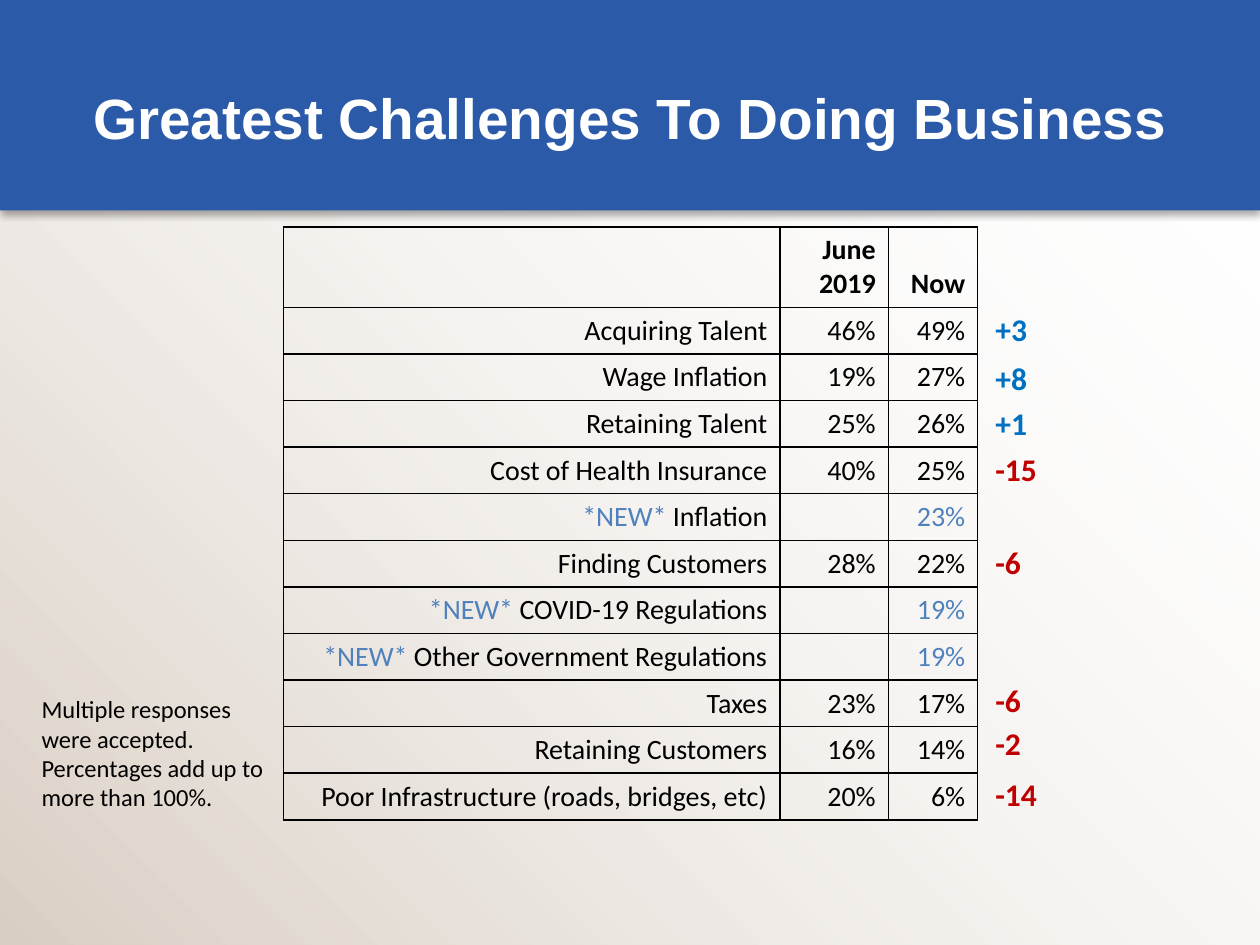
from lxml import etree
from pptx import Presentation
from pptx import util as u
from pptx.dml.color import RGBColor
from pptx.enum import shapes, text
from pptx.oxml import parse_xml
from pptx.oxml.ns import nsdecls, qn

WHITE = RGBColor(0xFF, 0xFF, 0xFF)
BLACK = RGBColor(0, 0, 0)
SAND = RGBColor(0xDA, 0xCF, 0xC4)
NAVY = RGBColor(0x2B, 0x5A, 0xA9)
SKY = RGBColor(0x4F, 0x81, 0xBD)
BLUE = RGBColor(0x00, 0x70, 0xC0)
RED = RGBColor(0xC0, 0x00, 0x00)

NEW = "*NEW* "
ROWS = [
    ("", "June 2019", "Now"),
    ("Acquiring Talent", "46%", "49%"),
    ("Wage Inflation", "19%", "27%"),
    ("Retaining Talent", "25%", "26%"),
    ("Cost of Health Insurance", "40%", "25%"),
    (NEW + "Inflation", "", "23%"),
    ("Finding Customers", "28%", "22%"),
    (NEW + "COVID-19 Regulations", "", "19%"),
    (NEW + "Other Government Regulations", "", "19%"),
    ("Taxes", "23%", "17%"),
    ("Retaining Customers", "16%", "14%"),
    ("Poor Infrastructure (roads, bridges, etc)", "20%", "6%"),
]
GAPS = [("+3", 2.41), ("+8", 2.8), ("+1", 3.16), ("-15", 3.52),
        ("-6", 4.26), ("-6", 5.36), ("-2", 5.7), ("-14", 6.1)]


class Page:
    font = "Calibri"
    size = 16

    def __init__(self, deck):
        self.slide = deck.slides.add_slide(deck.slide_layouts[6])

    def style(self, para, size, color, bold=False, font=None, align=None):
        para.alignment = align
        face = para.font
        face.name = font or self.font
        face.size = u.Pt(size)
        face.bold = bold
        face.color.rgb = color

    def block(self, *box):
        shape = self.slide.shapes.add_shape(
            shapes.MSO_SHAPE.RECTANGLE, *map(u.Inches, box))
        shape.shadow.inherit = False
        shape.line.fill.background()
        return shape

    def fade(self, *box):
        shape = self.block(*box)
        shape.fill.gradient()
        shape.fill.gradient_angle = 45
        for stop, color in zip(shape.fill.gradient_stops, (SAND, WHITE)):
            stop.color.rgb = color
        last = list(shape._element.spPr.iter(qn("a:srgbClr")))[-1]
        etree.SubElement(last, qn("a:alpha")).set("val", "0")

    def band(self, *box):
        shape = self.block(*box)
        shape.fill.solid()
        shape.fill.fore_color.rgb = NAVY
        shape._element.spPr.find(qn("a:effectLst")).append(parse_xml(
            f'<a:outerShdw {nsdecls("a")} blurRad="{u.Pt(4)}" dist="{u.Pt(2.2)}" '
            'dir="5400000" rotWithShape="0"><a:srgbClr val="000000">'
            '<a:alpha val="32000"/></a:srgbClr></a:outerShdw>'))

    def label(self, words, box, size, color, middle=False, **style):
        frame = self.slide.shapes.add_textbox(*map(u.Inches, box)).text_frame
        frame.word_wrap = True
        frame.margin_left = frame.margin_right = u.Inches(0.05)
        if middle:
            frame.vertical_anchor = text.MSO_ANCHOR.MIDDLE
        para = frame.paragraphs[0]
        para.text = words
        self.style(para, size, color, **style)

    def edge(self, cell):
        props = cell._tc.get_or_add_tcPr()
        for side in "LRTB":
            props.append(parse_xml(
                f'<a:ln{side} {nsdecls("a")} w="{u.Pt(1)}"><a:solidFill>'
                f'<a:srgbClr val="{BLACK}"/></a:solidFill></a:ln{side}>'))
        cell.fill.background()

    def cell(self, cell, words, color, head):
        self.edge(cell)
        cell.vertical_anchor = (
            text.MSO_ANCHOR.BOTTOM if head else text.MSO_ANCHOR.MIDDLE)
        para = cell.text_frame.paragraphs[0]
        self.style(para, self.size, color, head, align=text.PP_ALIGN.RIGHT)
        if not words:
            para._p.get_or_add_endParaRPr().set("sz", str(self.size * 100))
        elif words.startswith(NEW):
            mark = para.add_run()
            mark.text = NEW
            mark.font.color.rgb = SKY
            para.add_run().text = words[len(NEW):]
        else:
            para.add_run().text = words

    def table(self, rows, left, top, wide, first, high):
        tall = [first] + [high] * (len(rows) - 1)
        grid = self.slide.shapes.add_table(
            len(rows), len(wide),
            *map(u.Inches, (left, top, sum(wide), sum(tall)))).table
        grid.first_row = grid.horz_banding = False
        for col, width in zip(grid.columns, wide):
            col.width = u.Inches(width)
        for r, (line, height) in enumerate(zip(rows, tall)):
            grid.rows[r].height = u.Inches(height)
            fresh = line[0].startswith(NEW)
            for c, words in enumerate(line):
                color = SKY if fresh and c else BLACK
                self.cell(grid.cell(r, c), words, color, r == 0)


def main():
    deck = Presentation()
    deck.slide_width, deck.slide_height = u.Inches(10), u.Inches(7.5)
    page = Page(deck)
    page.fade(0, 0, 10, 7.5)
    page.band(0, 0, 10, 1.67)
    page.label("Greatest Challenges To Doing Business", (0.5, 0.3, 9, 1.25),
               32.4, WHITE, middle=True, bold=True, font="Arial",
               align=text.PP_ALIGN.CENTER)
    page.table(ROWS, 2.25, 1.8, (3.94, 0.86, 0.71), 0.64, 0.37)
    page.label("Multiple responses were accepted. "
               "Percentages add up to more than 100%.",
               (0.28, 5.46, 1.96, 1.04), 14, BLACK)
    for words, top in GAPS:
        color = BLUE if words.startswith("+") else RED
        page.label(words, (7.85, top, 0.5, 0.4), 18, color, bold=True)
    deck.save("out.pptx")


if __name__ == "__main__":
    main()
